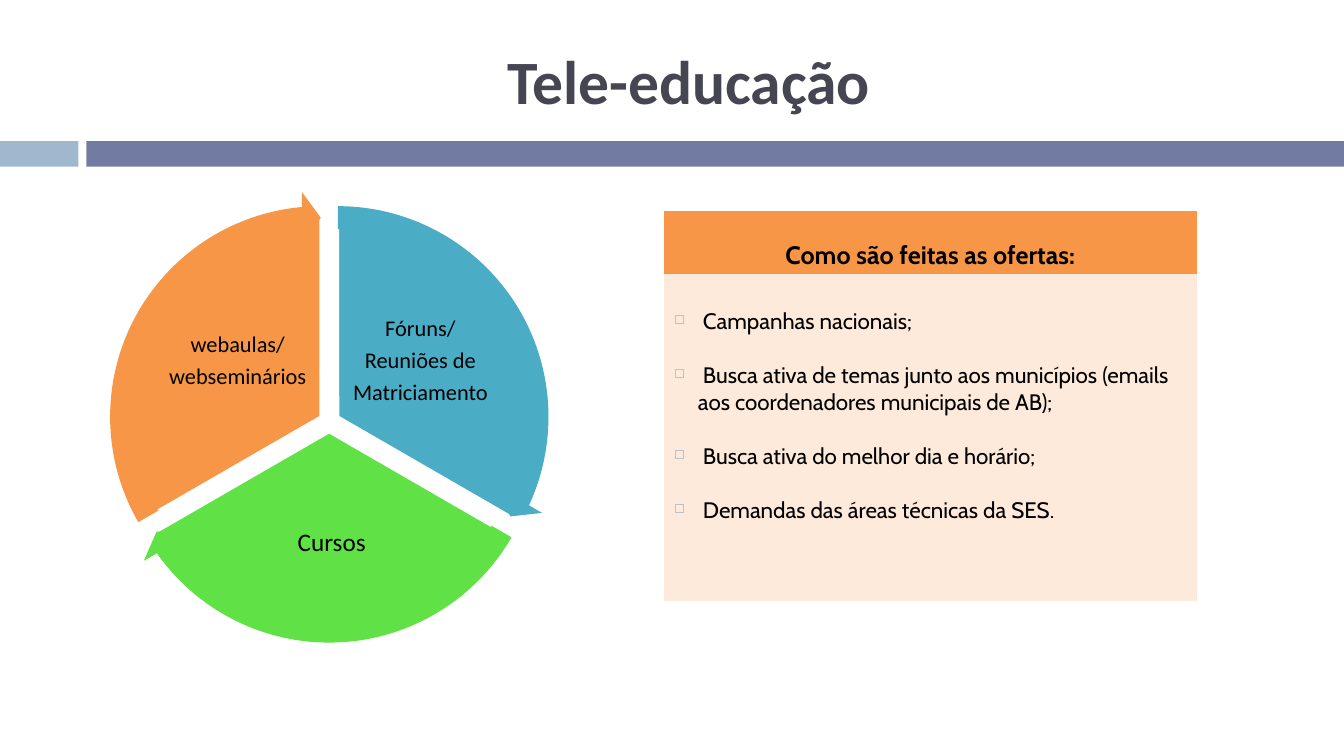
from lxml import etree
from pptx import Presentation
from pptx.dml.color import RGBColor
from pptx.enum import shapes, text
from pptx.oxml.ns import qn
from pptx.util import Cm, Pt

BLACK = RGBColor(0, 0, 0)
WHITE = RGBColor(255, 255, 255)
SLATE = RGBColor(0x46, 0x46, 0x53)
MIST = RGBColor(0x9F, 0xB8, 0xCD)
INDIGO = RGBColor(0x72, 0x7C, 0xA3)
TEAL = RGBColor(0x4B, 0xAC, 0xC6)
GREEN = RGBColor(0x60, 0xE1, 0x46)
ORANGE = RGBColor(0xF7, 0x96, 0x46)
PEACH = RGBColor(0xFD, 0xEA, 0xDA)

WIDTH, HEIGHT = 33.87, 19.05
TITLE = "Tele-educação"
HEAD = "Como são feitas as ofertas:"
OFFERS = [
    " Campanhas nacionais;",
    " Busca ativa de temas junto aos municípios (emails aos coordenadores municipais de AB);",
    " Busca ativa do melhor dia e horário;",
    " Demandas das áreas técnicas da SES.",
]
# lines, size, colour, pie corner, label box, start and end angle (1 = 5/3 degree)
SLICES = [
    (["Fóruns/", "Reuniões de", "Matriciamento"], 16, TEAL,
     (3.45, 5.44), (8.79, 7.59, 3.61, 3.02), 162, 18),
    (["Cursos"], 18, GREEN,
     (3.23, 5.82), (5.64, 12.37, 5.44, 2.64), 18, 90),
    (["webaulas/", "webseminários"], 16, ORANGE,
     (3.02, 5.44), (4.19, 7.59, 3.61, 3.02), 90, 162),
]
PIE, RING = 10.13, 11.38
TIP = 3.275
BAR_TOP, BAR_HIGH = 3.56, 0.64
CARD_X, CARD_Y, CARD_W = 16.74, 5.33, 13.41
HEAD_H, BODY_H = 1.6, 8.2

prs = Presentation()
prs.slide_width, prs.slide_height = Cm(WIDTH), Cm(HEIGHT)
slide = prs.slides.add_slide(prs.slide_layouts[6])
KIND = shapes.MSO_SHAPE


def draw(kind, box, fill, line=None, width=0.75, adjust=()):
    shape = slide.shapes.add_shape(kind, *map(Cm, box))
    shape.shadow.inherit = False
    shape.fill.solid()
    shape.fill.fore_color.rgb = fill
    if line is None:
        shape.line.fill.background()
    else:
        shape.line.color.rgb = line
        shape.line.width = Pt(width)
    for i, value in enumerate(adjust):
        shape.adjustments[i] = value
    return shape


def write(shape, lines, size, font="Calibri", color=BLACK, bold=False,
          align=text.PP_ALIGN.CENTER, anchor=text.MSO_ANCHOR.MIDDLE,
          inset=None, top=None, pitch=None, before=0, after=0):
    frame = shape.text_frame
    frame.word_wrap = True
    frame.vertical_anchor = anchor
    if inset is not None:
        frame.margin_left = frame.margin_right = Cm(inset)
        frame.margin_top = frame.margin_bottom = Cm(inset)
    if top is not None:
        frame.margin_top = Cm(top)
    for i, line in enumerate(lines):
        para = frame.add_paragraph() if i else frame.paragraphs[0]
        para.alignment = align
        para.line_spacing = pitch
        para.space_before = Pt(before if i else 0)
        para.space_after = Pt(after)
        run = para.add_run()
        run.text = line
        run.font.name, run.font.size, run.font.bold = font, Pt(size), bold
        run.font.color.rgb = color
    return frame


def bullet(para, indent):
    props = para._p.get_or_add_pPr()
    props.set("marL", str(Cm(indent)))
    props.set("indent", str(-Cm(indent)))
    tint = etree.SubElement(props, qn("a:buClr"))
    etree.SubElement(tint, qn("a:srgbClr"), val=str(MIST))
    etree.SubElement(props, qn("a:buSzPct"), val="60000")
    etree.SubElement(props, qn("a:buChar"), char="◻")


def label(box):
    return slide.shapes.add_textbox(*map(Cm, box))


def main():
    draw(KIND.RECTANGLE, (0, BAR_TOP, 1.98, BAR_HIGH), MIST)
    draw(KIND.RECTANGLE, (2.18, BAR_TOP, WIDTH - 2.18, BAR_HIGH), INDIGO)
    write(label((2.26, 0.64, 30.2, 2.74)), [TITLE], 44, color=SLATE, bold=True)

    for lines, size, fill, corner, box, start, end in SLICES:
        draw(KIND.PIE, (*corner, PIE, PIE), fill, WHITE, 2, (start, end))
        write(label(box), lines, size, inset=0.05, pitch=0.9, after=5.5)
    shift = (RING - PIE) / 2
    for _, _, fill, (x, y), _, start, end in SLICES:
        draw(KIND.CIRCULAR_ARROW, (x - shift, y - shift, RING, RING), fill,
             adjust=(0.051, TIP, end - TIP, start, 0.059))

    head = draw(KIND.RECTANGLE, (CARD_X, CARD_Y, CARD_W, HEAD_H), ORANGE, ORANGE)
    write(head, [HEAD], 18, font="Cabin", bold=True, anchor=text.MSO_ANCHOR.BOTTOM)
    body = draw(KIND.RECTANGLE, (CARD_X, CARD_Y + HEAD_H, CARD_W, BODY_H), PEACH, PEACH)
    frame = write(body, OFFERS, 16, font="Cabin", align=text.PP_ALIGN.LEFT,
                  anchor=text.MSO_ANCHOR.TOP, top=0.81, before=19.3)
    for para in frame.paragraphs:
        bullet(para, 0.6)

    prs.save("out.pptx")


if __name__ == "__main__":
    main()
